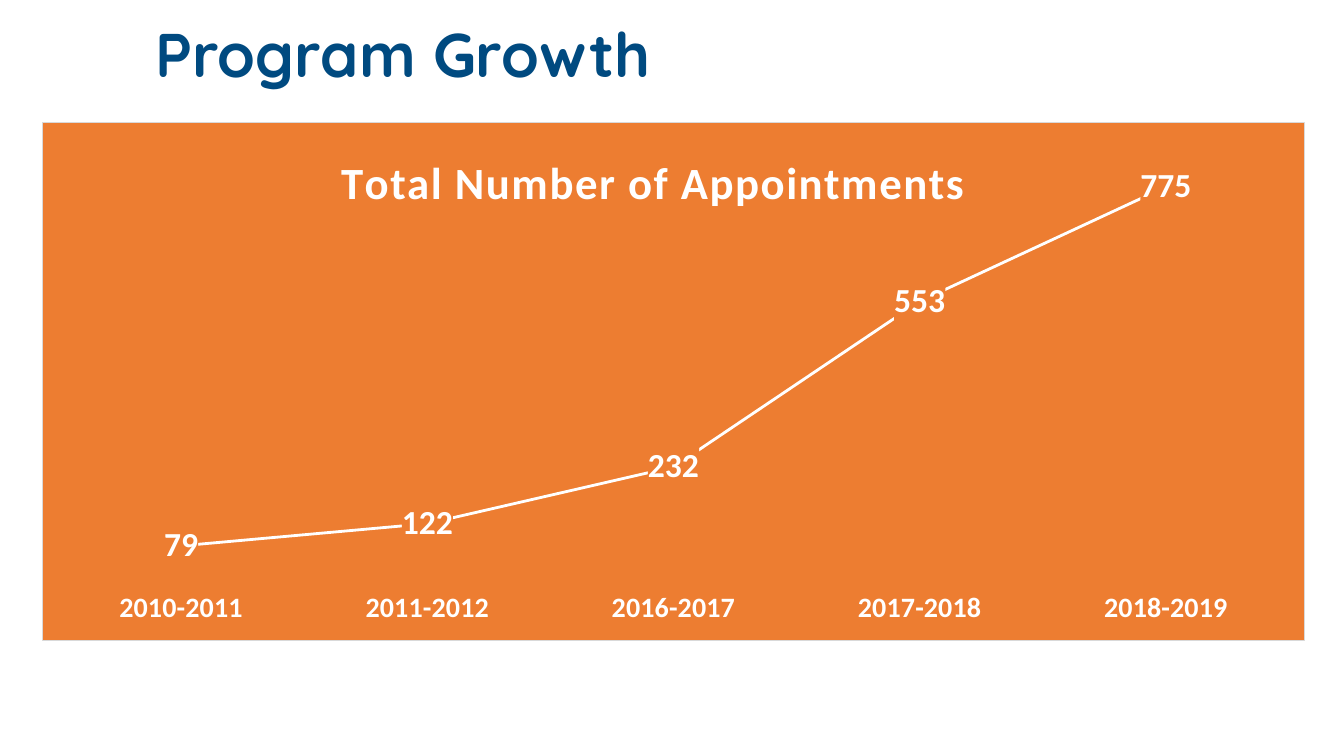
from lxml import etree
from pptx import Presentation
from pptx.chart.data import CategoryChartData
from pptx.dml.color import RGBColor
from pptx.enum.chart import XL_CHART_TYPE, XL_LABEL_POSITION, XL_MARKER_STYLE, XL_TICK_MARK
from pptx.enum.text import MSO_ANCHOR, PP_ALIGN
from pptx.oxml import parse_xml
from pptx.oxml.ns import nsdecls, qn
from pptx.util import Inches, Pt

COLORS = {"navy": "004A80", "orange": "ED7D31", "white": "FFFFFF", "border": "D9D9D9"}
APPOINTMENTS = {
    "2010-2011": 79,
    "2011-2012": 122,
    "2016-2017": 232,
    "2017-2018": 553,
    "2018-2019": 775,
}


def style_font(font, name, size, color):
    font.name, font.size, font.bold = name, Pt(size), True
    font.color.rgb = RGBColor.from_string(COLORS[color])


def manual_layout(parent, **settings):
    """Replace the automatic layout of a title or plot area."""
    for old in parent.findall(qn("c:layout")):
        parent.remove(old)
    layout = etree.Element(qn("c:layout"))
    manual = etree.SubElement(layout, qn("c:manualLayout"))
    for tag, value in settings.items():
        etree.SubElement(manual, qn(f"c:{tag}")).set("val", str(value))
    return layout


prs = Presentation()
prs.slide_width, prs.slide_height = Inches(13.33), Inches(7.5)
s = prs.slides.add_slide(prs.slide_layouts[5])

# Chart
data = CategoryChartData()
data.categories = list(APPOINTMENTS)
data.add_series("Series 1", list(APPOINTMENTS.values()))
frame = s.shapes.add_chart(
    XL_CHART_TYPE.LINE, Inches(0.42), Inches(1.21), Inches(12.52), Inches(5.15), data
)
chart = frame.chart
chart.has_legend = False
chart.font.name, chart.font.size = "Calibri", Pt(10)
chart_space = chart.element
chart_space.find(qn("c:chart")).addnext(parse_xml(
    f'<c:spPr {nsdecls("c", "a")}>'
    f'<a:solidFill><a:srgbClr val="{COLORS["orange"]}"/></a:solidFill>'
    f'<a:ln w="9525"><a:solidFill><a:srgbClr val="{COLORS["border"]}"/></a:solidFill></a:ln>'
    "</c:spPr>"
))

# Chart title
chart.has_title = True
p = chart.chart_title.text_frame.paragraphs[0]
r = p.add_run()
r.text = "Total Number of Appointments"
style_font(r.font, "Calibri", 32, "white")
r.font._element.set("spc", "100")
title = chart_space.find(".//" + qn("c:title"))
title.find(qn("c:tx")).addnext(
    manual_layout(title, xMode="edge", yMode="edge", x=0.23, y=0.04)
)
chart.chart_title.include_in_layout = False

# Plot area and axes
plot_area = chart_space.find(".//" + qn("c:plotArea"))
plot_area.insert(0, manual_layout(
    plot_area, layoutTarget="inner", xMode="edge", yMode="edge", x=0.012, y=0, w=0.976, h=0.896
))
years = chart.category_axis
years.major_tick_mark = years.minor_tick_mark = XL_TICK_MARK.NONE
years.format.line.fill.background()
style_font(years.tick_labels.font, "Calibri", 20, "white")
counts = chart.value_axis
counts.minimum_scale, counts.maximum_scale = 0, 900
counts.has_major_gridlines = False
counts.visible = False

# Line and its labels
plot = chart.plots[0]
plot.vary_by_categories = False
series = plot.series[0]
series.smooth = False
series.marker.style = XL_MARKER_STYLE.NONE
series.format.line.width = Pt(2)
series.format.line.color.rgb = RGBColor.from_string(COLORS["white"])
labels = series.data_labels
labels.show_value = True
labels.position = XL_LABEL_POSITION.CENTER
style_font(labels.font, "Calibri", 24, "white")
labels._element.find(qn("c:txPr")).addprevious(parse_xml(
    f'<c:spPr {nsdecls("c", "a")}><a:solidFill>'
    f'<a:srgbClr val="{COLORS["orange"]}"/></a:solidFill></c:spPr>'
))

# Slide title
sp = s.shapes.title
sp.left, sp.top, sp.width, sp.height = Inches(1.44), Inches(0.09), Inches(11.5), Inches(0.96)
tf = sp.text_frame
tf.text = "Program Growth"
tf.vertical_anchor = MSO_ANCHOR.MIDDLE
p = tf.paragraphs[0]
p.alignment = PP_ALIGN.LEFT
p.line_spacing = 0.9
style_font(p.font, "Quicksand", 44, "navy")

prs.save("out.pptx")
